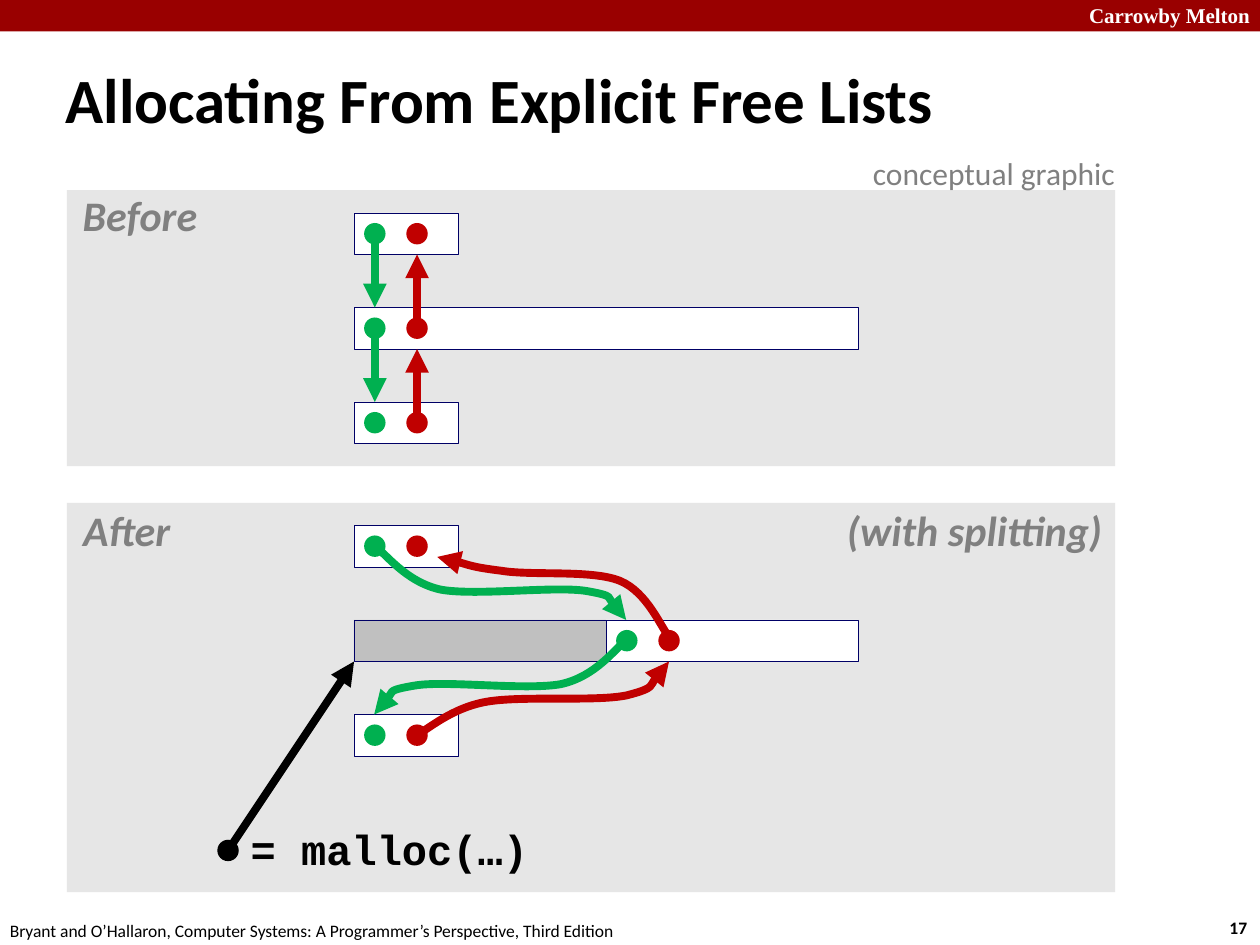
from lxml import etree
from pptx import Presentation
from pptx.dml.color import RGBColor
from pptx.enum.shapes import MSO_CONNECTOR, MSO_SHAPE
from pptx.enum.text import MSO_ANCHOR, PP_ALIGN
from pptx.oxml.ns import qn
from pptx.util import Inches, Pt

COLORS = {
    "banner": "990000", "white": "FFFFFF", "black": "000000",
    "panel": "E6E6E6", "outline": "000066", "allocated": "C0C0C0",
    "label": "808080", "next": "00B050", "previous": "C00000",
}
PANEL_LEFT, PANEL_WIDTH = 0.53, 8.32
LIST_LEFT, LIST_OFFSET = 2.81, 0.18  # list starts this far below the panel top
ROW_STEP, BLOCK_HEIGHT = 0.75, 0.33
SMALL_WIDTH, HALF_WIDTH = 0.83, 2
DOT_SIZE = 0.17
POINTERS = {"next": 0.165, "previous": 0.5}  # dot centres within a block

# Cubic curves as (x, y) from the top left of the list: start, then three points a segment
SPLICE_CURVES = [
    ("next", [(0.16, 0.16), (0.25, 0.22), (0.41, 0.45), (0.69, 0.51), (0.97, 0.56),
              (1.59, 0.48), (1.84, 0.52), (2.08, 0.56), (2.1, 0.7), (2.16, 0.75)]),
    ("next", [(2.16, 0.91), (2.08, 0.97), (1.92, 1.2), (1.64, 1.26), (1.36, 1.31),
              (0.73, 1.23), (0.49, 1.27), (0.24, 1.31), (0.23, 1.45), (0.16, 1.5)]),
    ("previous", [(2.51, 0.9), (2.44, 0.82), (2.33, 0.53), (2.11, 0.44), (1.89, 0.35),
                  (1.41, 0.4), (1.17, 0.36), (0.93, 0.33), (0.77, 0.27), (0.66, 0.25)]),
    ("previous", [(0.5, 1.66), (0.59, 1.62), (0.77, 1.45), (1.05, 1.4), (1.33, 1.35),
                  (1.91, 1.4), (2.16, 1.35), (2.4, 1.29), (2.43, 1.14), (2.5, 1.08)]),
]


def rgb(name):
    return RGBColor.from_string(COLORS[name])


def add_shape(slide, kind, box, fill, line=None):
    shape = slide.shapes.add_shape(kind, *map(Inches, box))
    shape.shadow.inherit = False
    shape.fill.solid()
    shape.fill.fore_color.rgb = rgb(fill)
    if line:
        shape.line.color.rgb = rgb(line)
        shape.line.width = Pt(0.25)
    else:
        shape.line.fill.background()
    return shape


def format_text(paragraph, size, color, font="Calibri", bold=False, italic=False):
    paragraph.font.size = Pt(size)
    paragraph.font.name = font
    paragraph.font.bold = bold
    paragraph.font.italic = italic
    paragraph.font.color.rgb = rgb(color)


def add_text(slide, box, text, size, color, align=PP_ALIGN.LEFT, wrap=False, **style):
    frame = slide.shapes.add_textbox(*map(Inches, box)).text_frame
    frame.word_wrap = wrap
    paragraph = frame.paragraphs[0]
    paragraph.text = text
    paragraph.alignment = align
    format_text(paragraph, size, color, **style)
    return frame


def add_label(slide, box, text, color="label", **style):
    """Add a bold panel caption with narrow margins."""
    frame = add_text(slide, box, text, 24, color, PP_ALIGN.CENTER, bold=True, **style)
    frame.margin_left = frame.margin_right = Inches(0.05)
    frame.paragraphs[0].line_spacing = 0.9


def style_arrow(shape, color):
    shape.line.color.rgb = rgb(color)
    shape.line.width = Pt(4.5)
    etree.SubElement(shape.line._get_or_add_ln(), qn("a:tailEnd"), type="triangle")


def add_arrow(slide, start, end, color):
    arrow = slide.shapes.add_connector(
        MSO_CONNECTOR.STRAIGHT, *map(Inches, (*start, *end)))
    style_arrow(arrow, color)
    etree.SubElement(arrow._element.spPr, qn("a:effectLst"))


def add_curved_arrow(slide, left, top, points, color):
    """Build an outline, then join each three of its points into a cubic curve."""
    start, *rest = [(Inches(left + x), Inches(top + y)) for x, y in points]
    builder = slide.shapes.build_freeform(*start)
    builder.add_line_segments(rest, close=False)
    shape = builder.convert_to_shape()
    shape.shadow.inherit = False
    shape.fill.background()
    style_arrow(shape, color)
    outline = next(shape._element.iter(qn("a:path")))
    segments = outline.findall(qn("a:lnTo"))
    for index in range(0, len(segments), 3):
        curve = etree.SubElement(outline, qn("a:cubicBezTo"))
        for segment in segments[index:index + 3]:
            curve.append(segment[0])
            outline.remove(segment)


def add_block(slide, left, top, width, fill="white"):
    add_shape(slide, MSO_SHAPE.RECTANGLE, (left, top, width, BLOCK_HEIGHT), fill, "outline")


def add_dot(slide, x, y, color):
    box = (x - DOT_SIZE / 2, y - DOT_SIZE / 2, DOT_SIZE, DOT_SIZE)
    add_shape(slide, MSO_SHAPE.OVAL, box, color)


def add_free_block(slide, left, top, width):
    add_block(slide, left, top, width)
    for color, offset in POINTERS.items():
        add_dot(slide, left + offset, top + BLOCK_HEIGHT / 2, color)


def add_panel(slide, top, height, caption, caption_box):
    box = (PANEL_LEFT, top, PANEL_WIDTH, height)
    add_shape(slide, MSO_SHAPE.RECTANGLE, box, "panel")
    add_label(slide, caption_box, caption, italic=True)


def add_before(slide, top, height):
    add_panel(slide, top, height, "Before", (0.6, top - 0.01, 1.02, 0.47))
    rows = [top + LIST_OFFSET + row * ROW_STEP for row in range(3)]
    for row, width in zip(rows, (SMALL_WIDTH, 2 * HALF_WIDTH, SMALL_WIDTH)):
        add_free_block(slide, LIST_LEFT, row, width)
    next_x, previous_x = (LIST_LEFT + offset for offset in POINTERS.values())
    middle = BLOCK_HEIGHT / 2
    for upper, lower in zip(rows, rows[1:]):
        add_arrow(slide, (next_x, upper + middle), (next_x, lower), "next")
        add_arrow(slide, (previous_x, lower + middle),
                  (previous_x, upper + BLOCK_HEIGHT), "previous")


def add_after(slide, top, height):
    add_panel(slide, top, height, "After", (0.6, top + 0.01, 0.81, 0.47))
    add_label(slide, (6.66, top + 0.01, 2.15, 0.47), "(with splitting)", italic=True)
    first = top + LIST_OFFSET
    second, third = first + ROW_STEP, first + 2 * ROW_STEP
    add_free_block(slide, LIST_LEFT, first, SMALL_WIDTH)
    add_free_block(slide, LIST_LEFT, third, SMALL_WIDTH)
    add_free_block(slide, LIST_LEFT + HALF_WIDTH, second, HALF_WIDTH)
    add_block(slide, LIST_LEFT, second, HALF_WIDTH, "allocated")
    for color, points in SPLICE_CURVES:
        add_curved_arrow(slide, LIST_LEFT, first, points, color)
    result = (LIST_LEFT - 1, top + 2.76)
    add_dot(slide, *result, "black")
    add_arrow(slide, result, (LIST_LEFT, second + BLOCK_HEIGHT), "black")
    add_label(slide, (1.93, top + 2.54, 2.32, 0.47), "= malloc(…)", "black",
              font="Courier New")


def add_title(slide):
    title = slide.shapes.title
    title.left, title.top, title.width, title.height = map(Inches, (0.42, 0.51, 8.75, 0.63))
    title.text_frame.vertical_anchor = MSO_ANCHOR.MIDDLE
    paragraph = title.text_frame.paragraphs[0]
    paragraph.text = "Allocating From Explicit Free Lists"
    paragraph.alignment = PP_ALIGN.LEFT
    paragraph.line_spacing = 0.87
    format_text(paragraph, 36, "black", bold=True)


def add_banner_and_footer(slide):
    add_shape(slide, MSO_SHAPE.RECTANGLE, (0, 0, 10, 0.25), "banner")
    add_text(slide, (8.44, -0.03, 1.58, 0.3), "Carrowby Melton", 12, "white",
             PP_ALIGN.RIGHT, wrap=True, font="Times New Roman", bold=True)
    add_text(slide, (9.66, 7.23, 0.37, 0.27), "17", 10, "black", bold=True)
    add_text(slide, (-0.02, 7.25, 5.08, 0.27),
             "Bryant and O’Hallaron, Computer Systems: A Programmer’s Perspective, "
             "Third Edition", 10, "black")


def main():
    presentation = Presentation()
    presentation.slide_width, presentation.slide_height = Inches(10), Inches(7.5)
    slide = presentation.slides.add_slide(presentation.slide_layouts[5])
    add_banner_and_footer(slide)
    add_title(slide)
    add_before(slide, 1.51, 2.19)
    add_after(slide, 3.99, 3.09)
    add_text(slide, (6.83, 1.17, 2.17, 0.4), "conceptual graphic", 18, "label")
    presentation.save("out.pptx")


if __name__ == "__main__":
    main()
